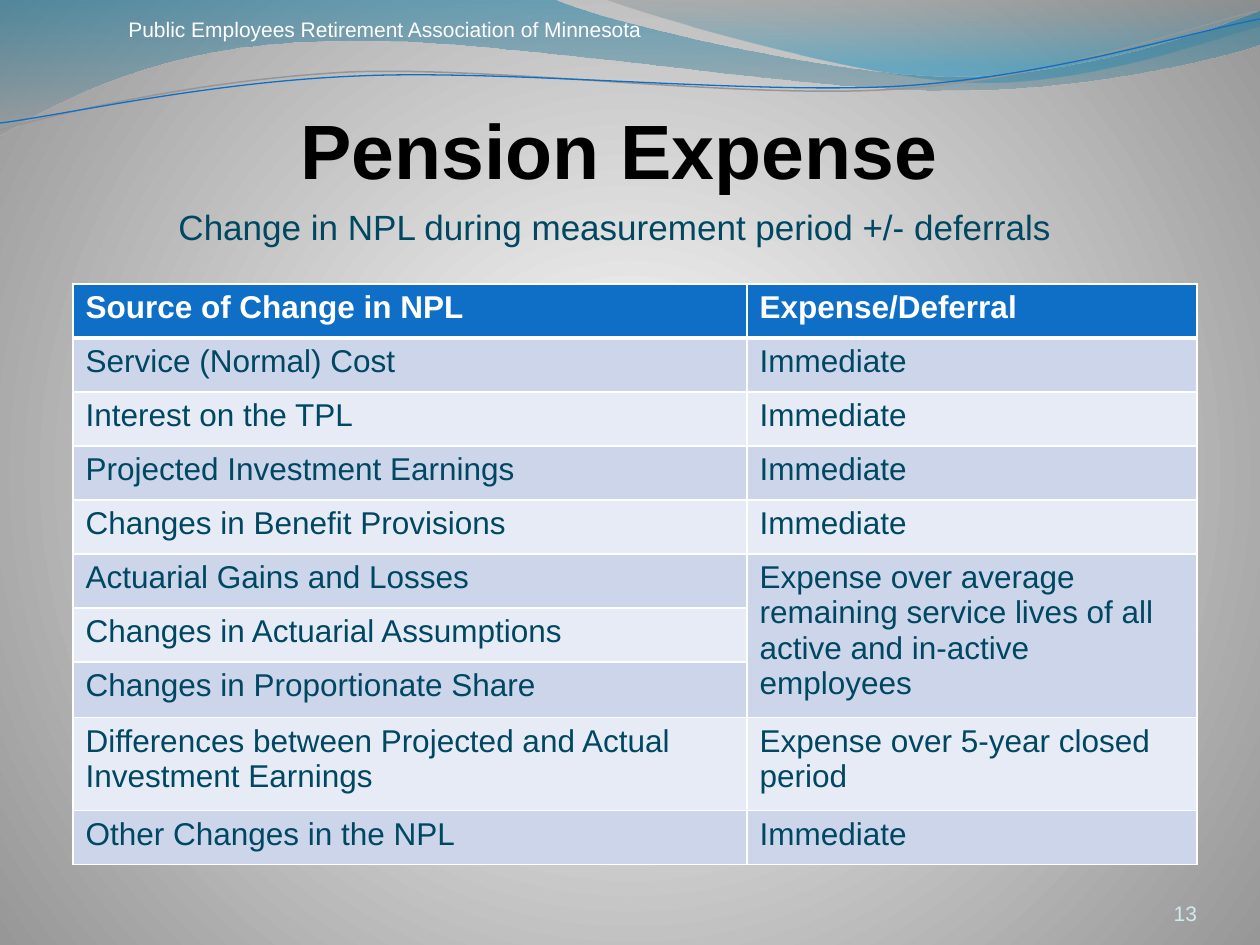
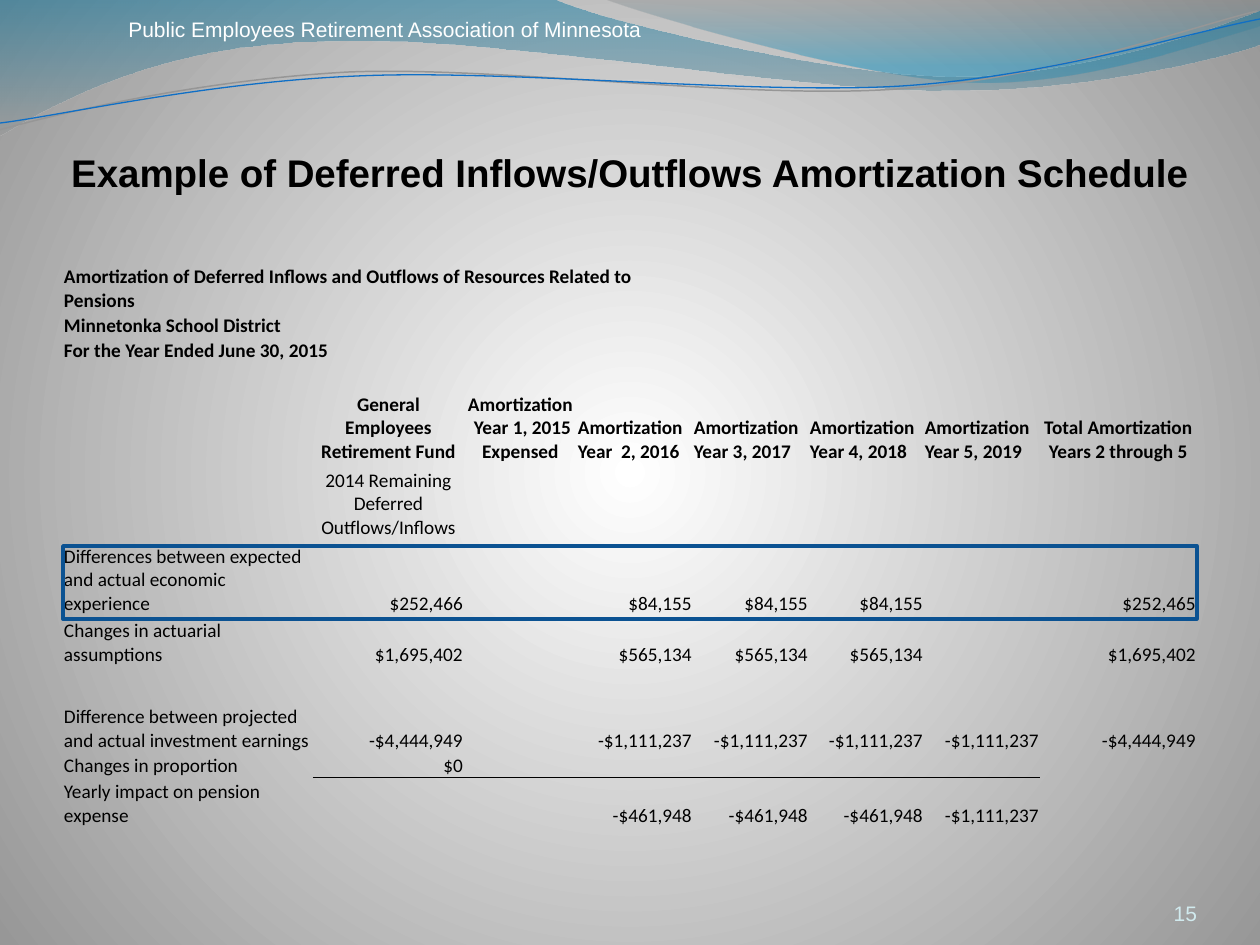
"""Build two pension accounting slides with a shared wave header."""
import pptx
import pptx.dml.color
import pptx.enum.shapes
import pptx.enum.text
import pptx.util
from lxml import etree
from pptx.oxml.ns import qn

UNIT = 914400 / 126
ALIGN = pptx.enum.text.PP_ALIGN
ANCHOR = pptx.enum.text.MSO_ANCHOR
BLUE, TEAL, WHITE, BLACK = "0F6FC6", "004762", "FFFFFF", "000000"
BANDS = ("E7EBF5", "CCD5EA")
PLAIN = "{2D5ABB26-0587-4C30-8999-92F81FD0307C}"
TITLE = (63, 38, 1134, 157)
NUMBER = (1092, 876, 105, 50)
ORG = "Public Employees Retirement Association of Minnesota"

WAVES = [
    {"steps": [(604, -1), (641, 14, 859, 78, 969, 82),
               (1079, 87, 1211, 40, 1260, 26), (1260, 0)],
     "stops": [(0, "7E7E7E", 30), (80, "008BBF", 45)]},
    {"steps": [(1, 0), (556, 0), (601, 21, 838, 77, 956, 77),
               (1076, 77, 1208, 32, 1261, 11), (1263, 44),
               (1240, 53, 1097, 92, 941, 91), (785, 91, 483, 34, 325, 42),
               (164, 44, 59, 101, 0, 136)],
     "stops": [(0, "0074A1", 45), (100, "9A9A9A", 55)]},
    {"steps": [(-1, 130), (60, 113, 199, 80, 349, 72),
               (499, 66, 746, 100, 897, 89), (1050, 79, 1183, 29, 1257, 11)],
     "line": ("969696", 0.85)},
    {"steps": [(0, 123), (59, 116, 207, 82, 357, 76),
               (508, 69, 752, 95, 902, 86), (1053, 76, 1186, 33, 1260, 19)],
     "line": (BLUE, 0.75)},
]

CAPTION = "Change in NPL during measurement period +/- deferrals"
SOURCES = [
    ("Source of Change in NPL", "Expense/Deferral"),
    ("Service (Normal) Cost", "Immediate"),
    ("Interest on the TPL", "Immediate"),
    ("Projected Investment Earnings", "Immediate"),
    ("Changes in Benefit Provisions", "Immediate"),
    ("Actuarial Gains and Losses",
     "Expense over average remaining service lives of all active and in-active employees"),
    ("Changes in Actuarial Assumptions", ""),
    ("Changes in Proportionate Share", ""),
    ("Differences between Projected and Actual Investment Earnings",
     "Expense over 5-year closed period"),
    ("Other Changes in the NPL", "Immediate"),
]

SPREAD = [
    (51, ["Amortization of Deferred Inflows and Outflows of Resources Related to Pensions"]),
    (25, ["Minnetonka School District"]),
    (25, ["For the Year Ended June 30, 2015"]),
    (101, ["", "General Employees Retirement Fund",
           "Amortization\n Year 1, 2015 Expensed", "Amortization Year  2, 2016",
           "Amortization Year 3, 2017", "Amortization Year 4, 2018",
           "Amortization Year 5, 2019", "Total Amortization Years 2 through 5"]),
    (76, ["", "2014 Remaining Deferred Outflows/Inflows"]),
    (76, ["Differences between expected and actual economic experience", "$252,466", "",
          "$84,155", "$84,155", "$84,155", "", "$252,465"]),
    (51, ["Changes in actuarial assumptions", "$1,695,402", "",
          "$565,134", "$565,134", "$565,134", "", "$1,695,402"]),
    (86, ["Difference between projected and actual investment earnings", "-$4,444,949", "",
          "-$1,111,237", "-$1,111,237", "-$1,111,237", "-$1,111,237", "-$4,444,949"]),
    (25, ["Changes in proportion", "$0"]),
    (50, ["Yearly impact on pension expense", "", "",
          "-$461,948", "-$461,948", "-$461,948", "-$1,111,237"]),
]
WIDTHS = [250, 151, 113, 116, 116, 115, 116, 157]


def px(*nums):
    """Turn pixels into EMU."""
    return [pptx.util.Emu(round(n * UNIT)) for n in nums]


def paint(code):
    """Turn a hex string into a colour."""
    return pptx.dml.color.RGBColor.from_string(code)


def write(frame, text, size=12, color=WHITE, bold=False, face="Arial", align=ALIGN.LEFT):
    """Fill a text frame, one paragraph per line of text."""
    frame.word_wrap = True
    for n, line in enumerate(text.split("\n")):
        para = frame.add_paragraph() if n else frame.paragraphs[0]
        para.alignment = align
        para.space_before = pptx.util.Pt(0)
        if not line:
            etree.SubElement(para._p, qn("a:endParaRPr"), sz=str(size * 100))
            continue
        run = para.add_run()
        run.text = line
        font = run.font
        font.size, font.name, font.bold = pptx.util.Pt(size), face, bold
        font.color.rgb = paint(color)


def inset(frame, left, top, right, bottom, anchor=ANCHOR.BOTTOM):
    """Set the margins and the anchor of a frame or a cell."""
    frame.margin_left, frame.margin_top, frame.margin_right, frame.margin_bottom = px(
        left, top, right, bottom)
    frame.vertical_anchor = anchor


def place(shape, box):
    """Move a shape to a box."""
    shape.left, shape.top, shape.width, shape.height = px(*box)


def blend(fill, root, stops, radial=False):
    """Give a fill a gradient of (place, colour, opacity) stops."""
    fill.gradient()
    grad = root.xpath(".//a:gradFill")[0]
    for kid in list(grad):
        grad.remove(kid)
    ramp = etree.SubElement(grad, qn("a:gsLst"))
    for pos, code, solid in stops:
        stop = etree.SubElement(ramp, qn("a:gs"), pos=str(pos * 1000))
        tone = etree.SubElement(stop, qn("a:srgbClr"), val=code)
        if solid < 100:
            etree.SubElement(tone, qn("a:alpha"), val=str(solid * 1000))
    if radial:
        way = etree.SubElement(grad, qn("a:path"))
        way.set("path", "circle")
        etree.SubElement(way, qn("a:fillToRect"), l="50000", t="50000", r="50000", b="50000")
    else:
        etree.SubElement(grad, qn("a:lin"), ang="5400000", scaled="0")


def bend(shape, steps):
    """Turn the segments that have control points into cubic curves."""
    for step, node in zip(steps[1:], shape.element.xpath(".//a:lnTo")):
        if len(step) == 2:
            continue
        curve = etree.Element(qn("a:cubicBezTo"))
        for n in (0, 2, 4):
            x, y = px(*step[n:n + 2])
            etree.SubElement(curve, qn("a:pt"), x=str(x - shape.left), y=str(y - shape.top))
        node.getparent().replace(node, curve)


def wave(slide, steps, stops=None, line=None):
    """Draw one wave of the header."""
    knots = [px(*step[-2:]) for step in steps]
    pen = slide.shapes.build_freeform(*knots[0])
    pen.add_line_segments(knots[1:], close=bool(stops))
    shape = pen.convert_to_shape()
    bend(shape, steps)
    shape.shadow.inherit = False
    if stops:
        blend(shape.fill, shape.element, stops)
        shape.line.fill.background()
    else:
        shape.fill.background()
        shape.line.color.rgb = paint(line[0])
        shape.line.width = pptx.util.Pt(line[1])
    return shape


def dress(deck, slide):
    """Put the background and the header on the master."""
    master = deck.slide_master
    blend(master.background.fill, master.element,
          [(0, WHITE, 100), (100, "979797", 100)], radial=True)
    parts = [wave(slide, **item) for item in WAVES]
    label = slide.shapes.add_textbox(*px(116, 10, 557, 38))
    write(label.text_frame, ORG)
    parts.insert(2, label)
    for n, part in enumerate(parts, 20):
        part.element.xpath(".//p:cNvPr")[0].set("id", str(n))
        master.shapes.element.append(part.element)


def start(deck, layout, title, size, number):
    """Add a slide with its title and number."""
    slide = deck.slides.add_slide(deck.slide_layouts[layout])
    place(slide.shapes.title, TITLE)
    inset(slide.shapes.title.text_frame, 0, 6, 0, 0)
    write(slide.shapes.title.text_frame, title, size=size, color=BLACK, bold=True,
          align=ALIGN.CENTER)
    box = slide.shapes.add_textbox(*px(*NUMBER))
    inset(box.text_frame, 0, 0, 0, 0)
    write(box.text_frame, number, color="D1EAEE", align=ALIGN.RIGHT)
    return slide


def grid(slide, left, top, widths, heights, plain=False):
    """Add a table, with or without its style."""
    frame = slide.shapes.add_table(len(heights), len(widths),
                                   *px(left, top, sum(widths), sum(heights)))
    table = frame.table
    if plain:
        frame.element.xpath(".//a:tableStyleId")[0].text = PLAIN
        table.first_row = table.horz_banding = False
    for col, width in zip(table.columns, px(*widths)):
        col.width = width
    for row, height in zip(table.rows, px(*heights)):
        row.height = height
    return table


def edge(cell, code, **sides):
    """Draw cell borders, given as L, R, T, B widths in points."""
    props = cell._tc.get_or_add_tcPr()
    for side, width in sides.items():
        line = etree.SubElement(props, qn("a:ln" + side), w=str(round(width * 12700)))
        fill = etree.SubElement(line, qn("a:solidFill"))
        etree.SubElement(fill, qn("a:srgbClr"), val=code)


def expense(slide):
    """Fill the slide on pension expense."""
    body = slide.placeholders[1]
    place(body, (21, 199, 1134, 624))
    frame = body.text_frame
    frame.auto_size = pptx.enum.text.MSO_AUTO_SIZE.NONE
    props = frame.paragraphs[0]._p.get_or_add_pPr()
    props.set("marL", str(px(54)[0]))
    props.set("indent", "0")
    etree.SubElement(props, qn("a:buNone"))
    write(frame, CAPTION, size=20, color=TEAL, align=ALIGN.CENTER)
    heights = [93 if row[0].startswith("Differences") else 54 for row in SOURCES]
    table = grid(slide, 73, 284, [674, 450], heights)
    for r, row in enumerate(SOURCES):
        for c, text in enumerate(row):
            cell = table.cell(r, c)
            if not r:
                edge(cell, WHITE, L=1, R=1, T=1, B=3)
            cell.fill.solid()
            cell.fill.fore_color.rgb = paint(BANDS[r % 2] if r else BLUE)
            write(cell.text_frame, text, size=18, color=TEAL if r else WHITE, bold=not r)
    table.cell(5, 1).merge(table.cell(7, 1))


def schedule(slide):
    """Fill the slide on the amortization schedule."""
    table = grid(slide, 63, 262, WIDTHS, [height for height, _ in SPREAD], plain=True)
    for r, (_, row) in enumerate(SPREAD):
        for c in range(len(WIDTHS)):
            text = row[c] if c < len(row) else ""
            cell = table.cell(r, c)
            if r in (8, 9) and 1 <= c <= 6:
                edge(cell, BLACK, **{"B" if r == 8 else "T": 0.5})
            cell.fill.background()
            inset(cell, 1, 1, 1, 0)
            align = ALIGN.LEFT
            if "$" in text:
                align = ALIGN.RIGHT
            elif r in (3, 4) and c in (1, 2, 7):
                align = ALIGN.CENTER
            write(cell.text_frame, text, size=11, color=BLACK, bold=r < 4,
                  face="Calibri", align=align)
    table.cell(0, 0).merge(table.cell(0, 3))
    table.cell(2, 0).merge(table.cell(2, 1))
    mark = slide.shapes.add_shape(pptx.enum.shapes.MSO_SHAPE.RECTANGLE,
                                  *px(63, 546, 1134, 73))
    mark.shadow.inherit = False
    mark.fill.background()
    mark.line.color.rgb = paint("0B5292")
    mark.line.width = pptx.util.Pt(2)


def main():
    """Build and save the deck."""
    deck = pptx.Presentation()
    deck.slide_width, deck.slide_height = px(1260, 945)
    first = start(deck, 1, "Pension Expense ", 44, "13")
    dress(deck, first)
    expense(first)
    schedule(start(deck, 5, "Example of Deferred Inflows/Outflows Amortization Schedule",
                   22, "15"))
    deck.save("out.pptx")


if __name__ == "__main__":
    main()
